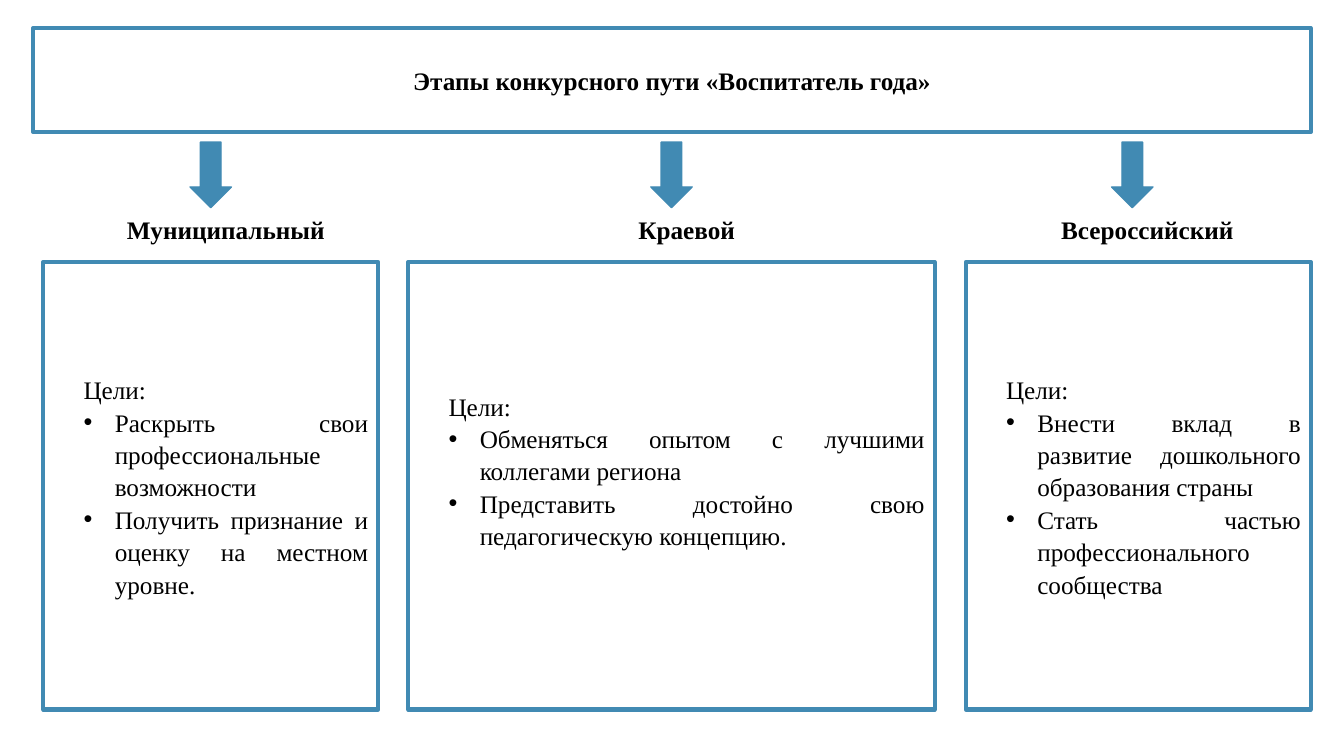
from dataclasses import dataclass

from lxml.etree import SubElement
from pptx import Presentation
from pptx.dml.color import RGBColor
from pptx.enum.shapes import MSO_SHAPE as SHAPE
from pptx.enum.text import MSO_ANCHOR as ANCHOR, MSO_AUTO_SIZE as AUTO, PP_ALIGN as ALIGN
from pptx.oxml.ns import qn
from pptx.util import Inches, Pt

BLUE, WHITE, BLACK = "418AB3", "FFFFFF", "000000"
FONT = "Times New Roman"
ARROW_W, ARROW_H = 0.41, 0.65
ARROW_TOP, LABEL_TOP, BOX_TOP = 1.41, 2.06, 2.6
BOX_H, LABEL_H = 4.44, 0.4
INDENT, HANGING = 0.3, 0.31


@dataclass
class Stage:
    name: str
    center: float
    label_width: float
    left: float
    width: float
    goals: tuple[str, ...]
    bottom_inset: float = 0.05


STAGES = [
    Stage("Муниципальный", 2.09, 2.47, 0.43, 3.32,
          ("Раскрыть свои профессиональные возможности",
           "Получить признание и оценку на местном уровне.")),
    Stage("Краевой", 6.66, 1.47, 4.05, 5.22,
          ("Обменяться опытом с лучшими коллегами региона",
           "Представить достойно свою педагогическую концепцию."), 0.37),
    Stage("Всероссийский", 11.23, 2.23, 9.58, 3.42,
          ("Внести вклад в развитие дошкольного образования страны",
           "Стать частью профессионального сообщества")),
]


def rgb(color: str) -> RGBColor:
    return RGBColor.from_string(color)


def place(sp, left: float, top: float, width: float, height: float) -> None:
    sp.left, sp.top = Inches(left), Inches(top)
    sp.width, sp.height = Inches(width), Inches(height)


def paint(sp, fill: str, line_width: float) -> None:
    sp.fill.solid()
    sp.fill.fore_color.rgb = rgb(fill)
    sp.line.color.rgb = rgb(BLUE)
    sp.line.width = Pt(line_width)


def add_block(slide, kind: SHAPE, left: float, top: float, width: float,
              height: float, fill: str, line_width: float):
    sp = slide.shapes.add_shape(kind, Inches(left), Inches(top), Inches(width), Inches(height))
    sp.shadow.inherit = False
    paint(sp, fill, line_width)
    return sp


def format_text(p, align: ALIGN, bold: bool = False) -> None:
    p.alignment = align
    for r in p.runs:
        r.font.name = FONT
        r.font.size = Pt(18)
        r.font.bold = bold
        r.font.color.rgb = rgb(BLACK)


def indent(p, bullet: bool = False) -> None:
    p.line_spacing = 1.07
    pPr = p._p.get_or_add_pPr()
    hanging = HANGING if bullet else 0
    pPr.set("marL", str(Inches(INDENT + hanging)))
    pPr.set("indent", str(-Inches(hanging)))
    if bullet:
        SubElement(pPr, qn("a:buFont"), typeface="Arial")
        SubElement(pPr, qn("a:buChar"), char="•")


def add_title(slide, text: str) -> None:
    sp = slide.shapes.title
    place(sp, 0.33, 0.28, 12.67, 1.03)
    geometry = SubElement(sp._element.spPr, qn("a:prstGeom"), prst="roundRect")
    SubElement(geometry, qn("a:avLst"))
    paint(sp, WHITE, 3)
    tf = sp.text_frame
    tf.text = text
    tf.word_wrap = True
    tf.auto_size = AUTO.NONE
    tf.vertical_anchor = ANCHOR.MIDDLE
    format_text(tf.paragraphs[0], ALIGN.CENTER, bold=True)


def add_goals(slide, stage: Stage) -> None:
    sp = add_block(slide, SHAPE.RECTANGLE, stage.left, BOX_TOP, stage.width, BOX_H, WHITE, 3)
    tf = sp.text_frame
    tf.word_wrap = True
    tf.vertical_anchor = ANCHOR.MIDDLE
    tf.margin_bottom = Inches(stage.bottom_inset)
    tf.text = "\n".join(("Цели:", *stage.goals))
    for i, p in enumerate(tf.paragraphs):
        indent(p, bullet=i > 0)
        format_text(p, ALIGN.JUSTIFY)


def add_label(slide, stage: Stage) -> None:
    sp = slide.shapes.add_textbox(
        Inches(stage.center - stage.label_width / 2), Inches(LABEL_TOP),
        Inches(stage.label_width), Inches(LABEL_H))
    tf = sp.text_frame
    tf.text = stage.name
    tf.word_wrap = False
    tf.auto_size = AUTO.SHAPE_TO_FIT_TEXT
    indent(tf.paragraphs[0])
    format_text(tf.paragraphs[0], ALIGN.CENTER, bold=True)


def main() -> None:
    prs = Presentation()
    prs.slide_width, prs.slide_height = Inches(13.33), Inches(7.5)
    slide = prs.slides.add_slide(prs.slide_layouts[5])
    add_title(slide, "Этапы конкурсного пути «Воспитатель года»")
    for stage in STAGES:
        add_goals(slide, stage)
        add_block(slide, SHAPE.DOWN_ARROW, stage.center - ARROW_W / 2, ARROW_TOP,
                  ARROW_W, ARROW_H, BLUE, 1)
        add_label(slide, stage)
    prs.save("out.pptx")


if __name__ == "__main__":
    main()
